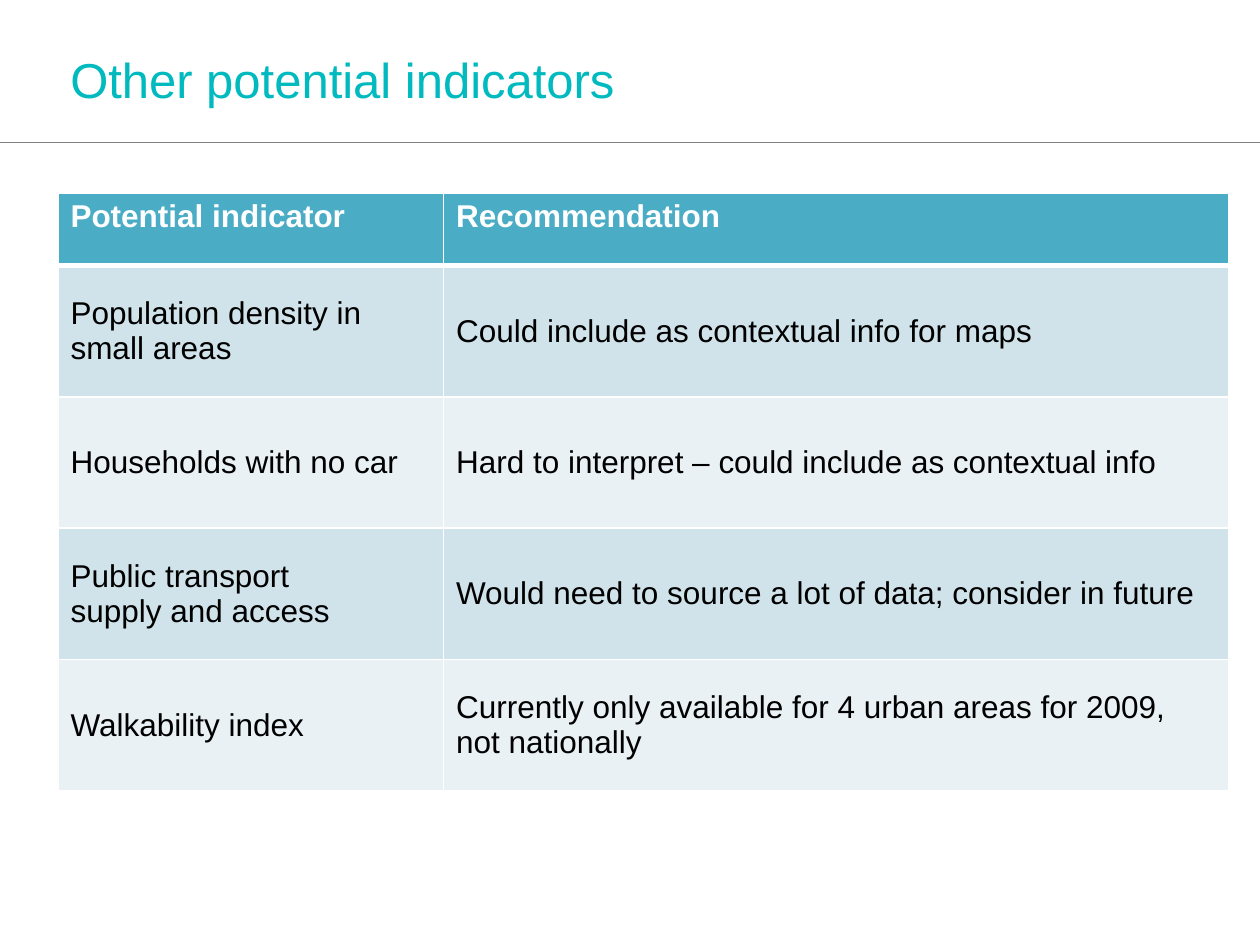
from dataclasses import dataclass

from lxml.etree import SubElement
from pptx import Presentation
from pptx.dml.color import RGBColor
from pptx.enum.shapes import MSO_CONNECTOR
from pptx.enum.text import MSO_ANCHOR
from pptx.oxml.ns import qn
from pptx.util import Inches, Pt


@dataclass(frozen=True)
class Theme:
    """Colours, type sizes and font of the slide."""
    font: str = "Arial"
    title: str = "00BABF"
    rule: str = "808080"
    head: str = "4BACC6"
    bands: tuple = ("D0E3EA", "E9F1F5")
    light: str = "FFFFFF"
    dark: str = "000000"
    big: int = 28
    body: int = 18


THEME = Theme()
WIDE, HIGH = Inches(10), Inches(7.5)
LEFT = 0.046
COLS = (0.306, 0.623)
ROWS = (0.077,) + (0.139,) * 4
CELLS = (
    ("Potential indicator", "Recommendation"),
    ("Population density in small areas",
     "Could include as contextual info for maps"),
    ("Households with no car",
     "Hard to interpret – could include as contextual info"),
    ("Public transport\nsupply and access",
     "Would need to source a lot of data; consider in future"),
    ("Walkability index",
     "Currently only available for 4 urban areas for 2009, not nationally"),
)


def across(share):
    """Turn a share of the slide's width into a length."""
    return round(WIDE * share)


def down(share):
    """Turn a share of the slide's height into a length."""
    return round(HIGH * share)


def style(frame, color, **format):
    """Apply font values to every paragraph of a text frame."""
    values = {"name": THEME.font, **format}
    for para in frame.paragraphs:
        for key, value in values.items():
            setattr(para.font, key, value)
        para.font.color.rgb = RGBColor.from_string(color)


def title(slide, text):
    """Add the slide title."""
    box = slide.shapes.add_textbox(across(LEFT), down(0.039), across(0.861), down(0.105))
    frame = box.text_frame
    for key, value in {"word_wrap": True, "margin_top": Inches(0.1), "text": text}.items():
        setattr(frame, key, value)
    style(frame, THEME.title, size=Pt(THEME.big))


def rule(slide, share):
    """Draw a thin line across the whole slide."""
    line = slide.shapes.add_connector(
        MSO_CONNECTOR.STRAIGHT, 0, down(share), WIDE, down(share))
    line.line.width = Pt(0.25)
    line.line.color.rgb = RGBColor.from_string(THEME.rule)
    SubElement(line._element.spPr, qn("a:effectLst"))


def edge(cell, side, width):
    """Give one side of a cell a solid light border."""
    line = SubElement(cell._tc.get_or_add_tcPr(), qn(f"a:ln{side}"), w=str(Pt(width)))
    fill = SubElement(line, qn("a:solidFill"))
    SubElement(fill, qn("a:srgbClr"), val=THEME.light)


def paint(cell, row, text):
    """Fill one table cell with its text, borders and colour."""
    head = row == 0
    thick = {0: "B", 1: "T"}.get(row)
    for side in "LRTB":
        edge(cell, side, 3 if side == thick else 1)
    cell.fill.solid()
    color = THEME.head if head else THEME.bands[(row - 1) % 2]
    cell.fill.fore_color.rgb = RGBColor.from_string(color)
    cell.vertical_anchor = MSO_ANCHOR.TOP if head else MSO_ANCHOR.MIDDLE
    cell.text = text
    style(cell.text_frame, THEME.light if head else THEME.dark,
          size=Pt(THEME.body), bold=head)


def grid(slide):
    """Add the table of indicators."""
    table = slide.shapes.add_table(
        len(ROWS), len(COLS), across(LEFT), down(0.204),
        across(sum(COLS)), down(sum(ROWS))).table
    for col, share in zip(table.columns, COLS):
        col.width = across(share)
    for row, share in zip(table.rows, ROWS):
        row.height = down(share)
    for r, texts in enumerate(CELLS):
        for c, text in enumerate(texts):
            paint(table.cell(r, c), r, text)


def main():
    """Build and save the slide."""
    deck = Presentation()
    deck.slide_width, deck.slide_height = WIDE, HIGH
    slide = deck.slides.add_slide(deck.slide_layouts[6])
    rule(slide, 0.151)
    title(slide, "Other potential indicators")
    grid(slide)
    deck.save("out.pptx")


if __name__ == "__main__":
    main()
